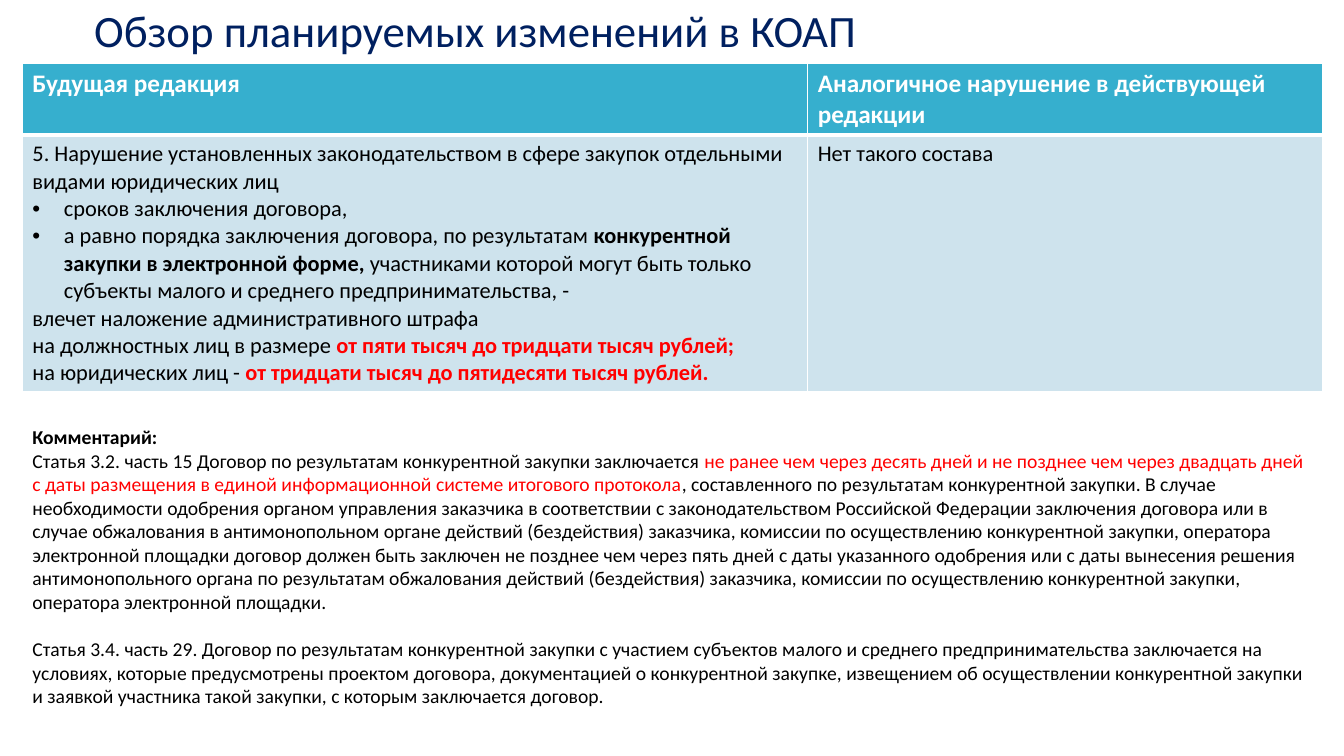
"""Build the slide reviewing planned changes to the administrative code."""
import pptx
import pptx.dml.color
import pptx.enum.text
import pptx.oxml
import pptx.oxml.ns
import pptx.util
from pptx.util import Pt

RGBColor = pptx.dml.color.RGBColor
NAVY = RGBColor(0x00, 0x20, 0x60)
TEAL = RGBColor(0x36, 0xAF, 0xCE)
PALE_BLUE = RGBColor(0xCE, 0xE3, 0xED)
WHITE = RGBColor(0xFF, 0xFF, 0xFF)
BLACK = RGBColor(0x00, 0x00, 0x00)
RED = RGBColor(0xFF, 0x00, 0x00)

BOLD = {"bold": True}
RED_TEXT = {"color": RED}
PENALTY = {"color": RED, "bold": True}

TITLE = "Обзор планируемых изменений в КОАП"
HEADINGS = ["Будущая редакция", "Аналогичное нарушение в действующей редакции"]
FUTURE_WORDING = [
    {"runs": [("5. Нарушение установленных законодательством в сфере закупок отдельными видами юридических лиц", {})]},
    {"runs": [("сроков заключения договора,", {})], "bullet": True},
    {"runs": [
        ("а равно порядка заключения договора, по результатам ", {}),
        ("конкурентной закупки в электронной форме, ", BOLD),
        ("участниками которой могут быть только субъекты малого и среднего предпринимательства, -", {}),
    ], "bullet": True},
    {"runs": [("влечет наложение административного штрафа", {})]},
    {"runs": [("на должностных лиц в размере ", {}),
              ("от пяти тысяч до тридцати тысяч рублей;", PENALTY)]},
    {"runs": [("на юридических лиц - ", {}),
              ("от тридцати тысяч до пятидесяти тысяч рублей.", PENALTY)]},
]
CURRENT_WORDING = [{"runs": [("Нет такого состава", {})]}]
COMMENTARY = [
    {"runs": [("Комментарий:", BOLD)]},
    {"runs": [
        ("Статья 3.2. часть 15 Договор по результатам конкурентной закупки заключается ", {}),
        ("не ранее чем через десять дней и не позднее чем через двадцать дней с даты размещения "
         "в единой информационной системе итогового протокола", RED_TEXT),
        (", составленного по результатам конкурентной закупки. В случае необходимости одобрения "
         "органом управления заказчика в соответствии с законодательством Российской Федерации "
         "заключения договора или в случае обжалования в антимонопольном органе действий "
         "(бездействия) заказчика, комиссии по осуществлению конкурентной закупки, оператора "
         "электронной площадки договор должен быть заключен не позднее чем через пять дней с даты "
         "указанного одобрения или с даты вынесения решения антимонопольного органа по результатам "
         "обжалования действий (бездействия) заказчика, комиссии по осуществлению конкурентной "
         "закупки, оператора электронной площадки.", {}),
    ]},
    {"runs": [
        ("Статья 3.4. часть 29. Договор по результатам конкурентной закупки с участием субъектов "
         "малого и среднего предпринимательства заключается на условиях, которые предусмотрены "
         "проектом договора, документацией о конкурентной закупке, извещением об осуществлении "
         "конкурентной закупки и заявкой участника такой закупки, с которым заключается договор.", {}),
    ], "before": 17},
]

SLIDE_WIDTH, SLIDE_HEIGHT = 960, 540
MARGIN = 16
CONTENT_WIDTH = SLIDE_WIDTH - 2 * MARGIN + 1
FUTURE_WIDTH = 561
COLUMN_WIDTHS = [FUTURE_WIDTH, CONTENT_WIDTH - FUTURE_WIDTH]
ROW_HEIGHTS = [50.5, 182.5]
TABLE_TOP = 45.5
COMMENTARY_TOP, COMMENTARY_HEIGHT = 300, 211
BULLET_INDENT = 22.5
RULE, HEADER_RULE = 1, 3


def write_text(frame, paragraphs, size, color=BLACK, bold=False, line_spacing=None):
    """Fill a text frame with formatted paragraphs."""
    frame.word_wrap = True
    for index, content in enumerate(paragraphs):
        paragraph = frame.add_paragraph() if index else frame.paragraphs[0]
        paragraph.alignment = pptx.enum.text.PP_ALIGN.LEFT
        paragraph.space_before = Pt(content.get("before", 0))
        if line_spacing:
            paragraph.line_spacing = line_spacing
        if content.get("bullet"):
            properties = paragraph._p.get_or_add_pPr()
            properties.set("marL", str(Pt(BULLET_INDENT)))
            properties.set("indent", str(-Pt(BULLET_INDENT)))
            for tag, key, value in [("buFont", "typeface", "Arial"), ("buChar", "char", "•")]:
                pptx.oxml.ns.qn("a:" + tag)
                properties.append(pptx.oxml.parse_xml(
                    f'<a:{tag} {pptx.oxml.ns.nsdecls("a")} {key}="{value}"/>'))
        for text, style in content["runs"]:
            run = paragraph.add_run()
            run.text = text
            run.font.name = "Calibri"
            run.font.size = Pt(size)
            run.font.bold = style.get("bold", bold)
            run.font.color.rgb = style.get("color", color)


def format_cell(cell, fill, top, bottom):
    """Set a cell's fill and its white borders."""
    cell.fill.solid()
    cell.fill.fore_color.rgb = fill
    borders = [("L", RULE), ("R", RULE), ("T", top), ("B", bottom)]
    for position, (side, width) in enumerate(borders):
        cell._tc.get_or_add_tcPr().insert(position, pptx.oxml.parse_xml(
            f'<a:ln{side} {pptx.oxml.ns.nsdecls("a")} w="{Pt(width)}">'
            f'<a:solidFill><a:srgbClr val="{WHITE}"/></a:solidFill></a:ln{side}>'))


def main():
    """Create and save the presentation."""
    deck = pptx.Presentation()
    deck.slide_width, deck.slide_height = Pt(SLIDE_WIDTH), Pt(SLIDE_HEIGHT)
    slide = deck.slides.add_slide(deck.slide_layouts[5])

    title = slide.shapes.title
    title.left, title.top, title.width, title.height = Pt(60), Pt(1.5), Pt(828), Pt(44)
    title.text_frame.auto_size = pptx.enum.text.MSO_AUTO_SIZE.NONE
    title.text_frame.vertical_anchor = pptx.enum.text.MSO_ANCHOR.MIDDLE
    write_text(title.text_frame, [{"runs": [(TITLE, {})]}], size=32, color=NAVY, line_spacing=0.9)

    comparison = slide.shapes.add_table(
        2, 2, Pt(MARGIN), Pt(TABLE_TOP), Pt(CONTENT_WIDTH), Pt(sum(ROW_HEIGHTS))).table
    for row, height in zip(comparison.rows, ROW_HEIGHTS):
        row.height = Pt(height)
    wordings = [FUTURE_WORDING, CURRENT_WORDING]
    for column, (width, heading, wording) in enumerate(zip(COLUMN_WIDTHS, HEADINGS, wordings)):
        comparison.columns[column].width = Pt(width)
        header, body = comparison.cell(0, column), comparison.cell(1, column)
        format_cell(header, TEAL, RULE, HEADER_RULE)
        format_cell(body, PALE_BLUE, HEADER_RULE, RULE)
        write_text(header.text_frame, [{"runs": [(heading, {})]}], size=18, color=WHITE, bold=True)
        write_text(body.text_frame, wording, size=16)

    commentary = slide.shapes.add_textbox(
        Pt(MARGIN), Pt(COMMENTARY_TOP), Pt(CONTENT_WIDTH), Pt(COMMENTARY_HEIGHT))
    write_text(commentary.text_frame, COMMENTARY, size=14)

    deck.save("out.pptx")


if __name__ == "__main__":
    main()
